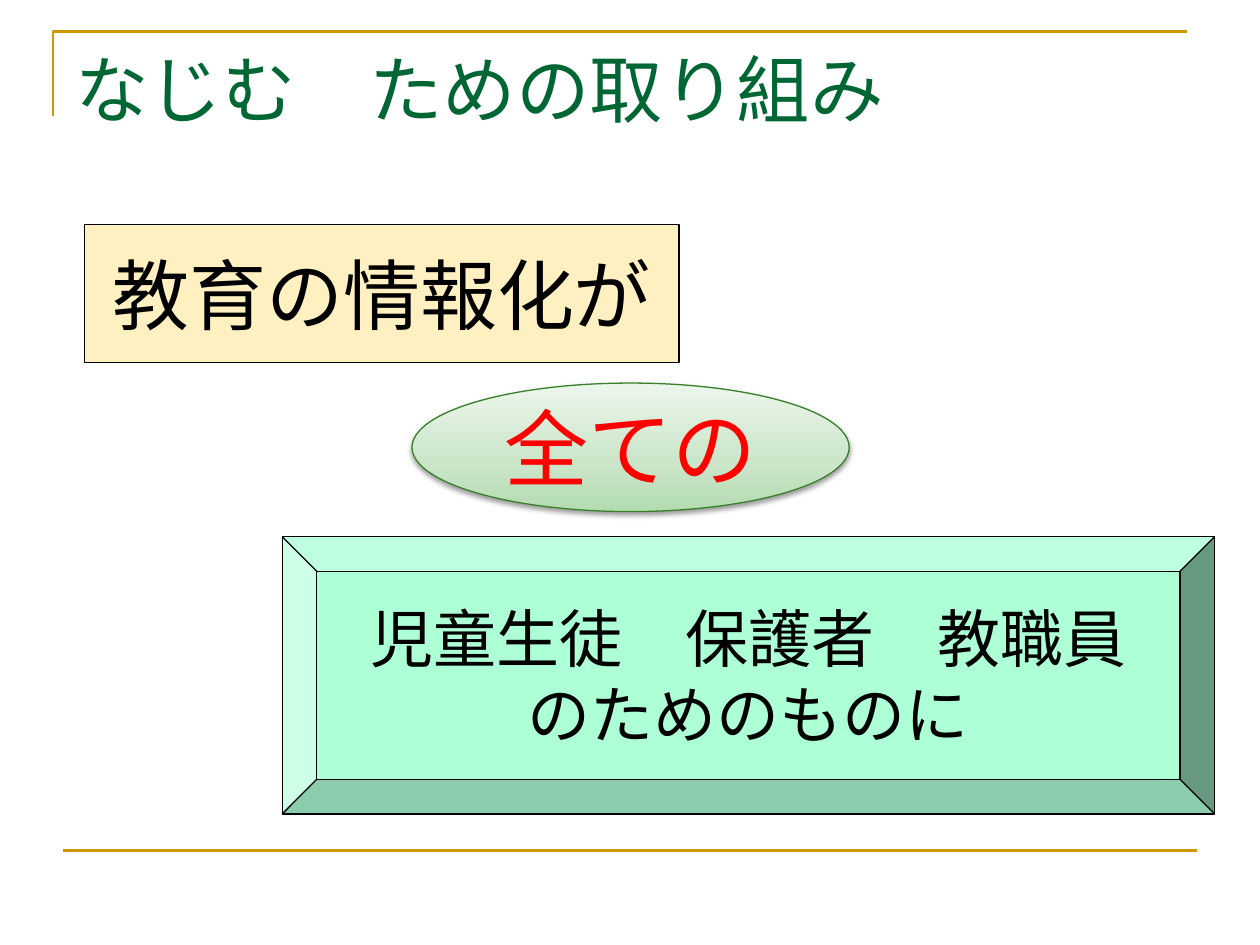
from dataclasses import dataclass

from lxml import etree
from pptx import Presentation
from pptx import util as u
from pptx.dml.color import RGBColor
from pptx.enum import shapes, text
from pptx.oxml import parse_xml
from pptx.oxml.ns import nsdecls, qn

HUES = {
    "gold": "CC9900", "title": "006633", "ink": "000000", "red": "FF0000",
    "cream": "FFF0C2", "mint": "ADFFD6", "leaf": "38802C",
    "low": "B3DBB0", "mid": "CAE5C8", "high": "EBF6EA",
}
SERIF = "TeX Gyre Pagella"
KIND = shapes.MSO_SHAPE


@dataclass
class Box:
    kind: KIND
    at: tuple[float, float, float, float]
    words: str
    size: int
    fill: str = ""
    line: str = "ink"
    ink: str = "ink"


BOXES = [
    Box(KIND.RECTANGLE, (0.67, 1.78, 4.72, 1.1), "教育の情報化が", 44, "cream"),
    Box(KIND.OVAL, (3.27, 3.04, 3.47, 1.02), "全ての", 48, line="leaf", ink="red"),
    Box(KIND.BEVEL, (2.24, 4.26, 7.4, 2.2),
        "児童生徒　保護者　教職員\nのためのものに", 36, "mint"),
]


def hue(name: str) -> RGBColor:
    return RGBColor.from_string(HUES[name])


def stroke(shape, name: str, width: float) -> None:
    shape.line.color.rgb = hue(name)
    shape.line.width = u.Pt(width)


def style(frame, size: int, font: str, ink: str, align) -> None:
    for para in frame.paragraphs:
        para.alignment = align
        for run in para.runs:
            run.font.size = u.Pt(size)
            run.font.name = font
            run.font.color.rgb = hue(ink)


def draw(slide, box: Box):
    shape = slide.shapes.add_shape(box.kind, *map(u.Inches, box.at))
    shape.shadow.inherit = False
    stroke(shape, box.line, 0.75)
    if box.fill:
        shape.fill.solid()
        shape.fill.fore_color.rgb = hue(box.fill)
    frame = shape.text_frame
    frame.text = box.words
    frame.word_wrap = False
    frame.vertical_anchor = text.MSO_ANCHOR.MIDDLE
    style(frame, box.size, SERIF, box.ink, text.PP_ALIGN.CENTER)
    return shape


def shade(shape) -> None:
    """Give a shape the upward green gradient and a soft drop shadow."""
    stops = "".join(
        f'<a:gs pos="{pos * 1000}"><a:srgbClr val="{HUES[name]}"/></a:gs>'
        for pos, name in ((0, "low"), (35, "mid"), (100, "high")))
    props = shape.fill._xPr
    props.find(qn("a:prstGeom")).addnext(parse_xml(
        f'<a:gradFill {nsdecls("a")} rotWithShape="1"><a:gsLst>{stops}</a:gsLst>'
        '<a:lin ang="16200000" scaled="0"/></a:gradFill>'))
    props.find(qn("a:effectLst")).append(parse_xml(
        f'<a:outerShdw {nsdecls("a")} blurRad="{u.Pt(3.1)}" dist="{u.Pt(1.6)}" '
        f'dir="5400000" rotWithShape="0"><a:srgbClr val="{HUES["ink"]}">'
        '<a:alpha val="38000"/></a:srgbClr></a:outerShdw>'))


def rules(slide) -> None:
    # Corner rule around the title
    pen = slide.shapes.build_freeform(u.Inches(0.42), u.Inches(0.92))
    pen.add_line_segments(
        [(u.Inches(0.42), u.Inches(0.25)), (u.Inches(9.42), u.Inches(0.25))],
        close=False)
    edge = pen.convert_to_shape()
    edge.fill.background()
    edge.shadow.inherit = False
    stroke(edge, "gold", 1.5)

    # Bottom rule
    base = slide.shapes.add_connector(
        shapes.MSO_CONNECTOR.STRAIGHT, u.Inches(0.5), u.Inches(6.75),
        u.Inches(9.5), u.Inches(6.75))
    stroke(base, "gold", 1.5)
    etree.SubElement(base._element.spPr, qn("a:effectLst"))


def title(slide) -> None:
    area = map(u.Inches, (0.5, 0.3, 9, 1.25))
    frame = slide.shapes.add_textbox(*area).text_frame
    frame.text = "なじむ　ための取り組み"
    frame.word_wrap = True
    style(frame, 42, "Noto Sans", "title", text.PP_ALIGN.LEFT)


def main() -> None:
    deck = Presentation()
    deck.slide_width, deck.slide_height = u.Inches(10), u.Inches(7.5)
    slide = deck.slides.add_slide(deck.slide_layouts[6])
    rules(slide)
    title(slide)
    # Message steps, top to bottom
    for box in BOXES:
        shape = draw(slide, box)
        if not box.fill:
            shade(shape)
    deck.save("out.pptx")


if __name__ == "__main__":
    main()
